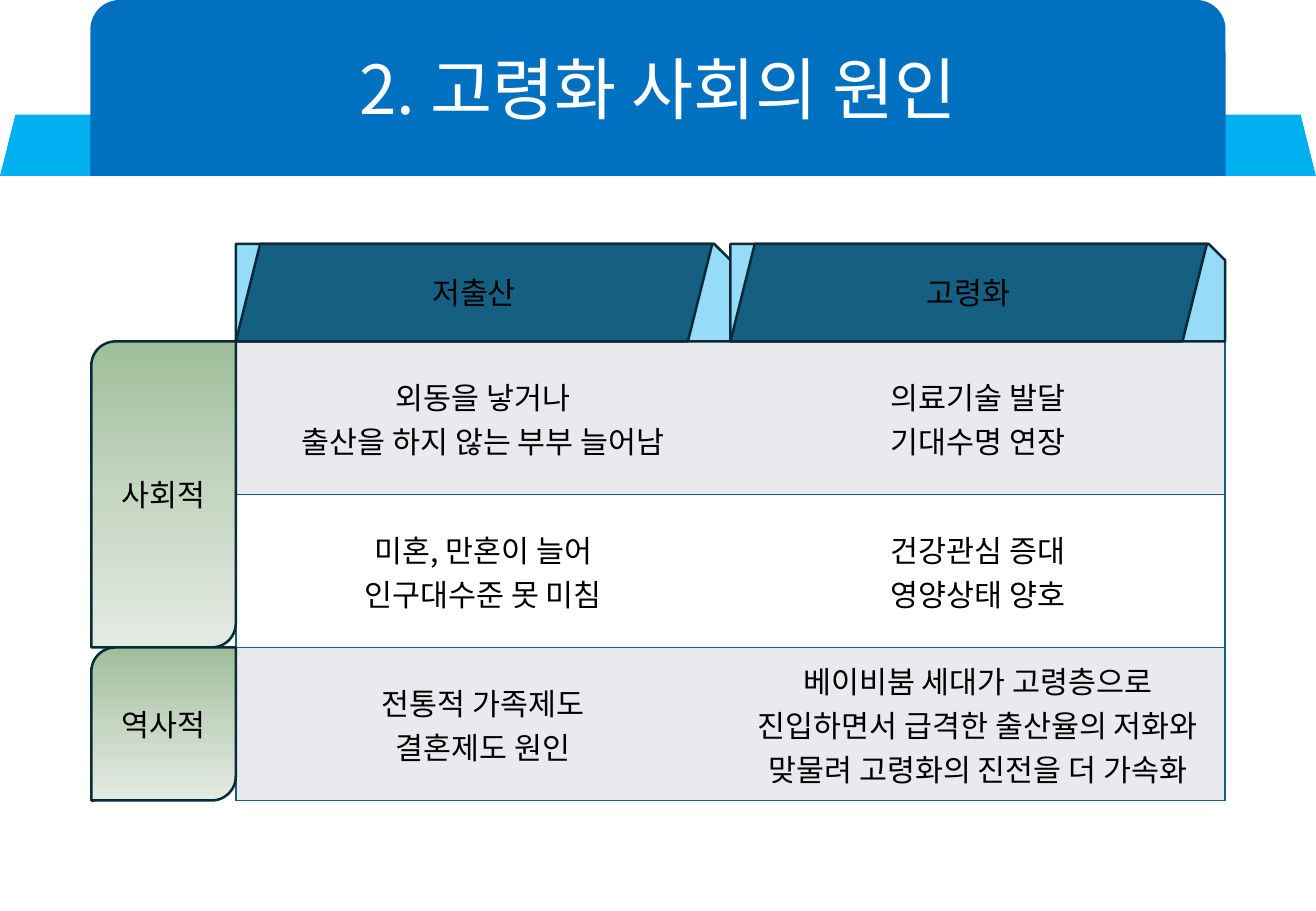
"""Build the slide on the causes of an ageing society."""
from copy import deepcopy
from dataclasses import dataclass

from pptx import Presentation
from pptx.dml.color import RGBColor
from pptx.enum import shapes, text
from pptx.oxml import ns, xmlchemy
from pptx import util as u

SHAPE = shapes.MSO_SHAPE


@dataclass(frozen=True)
class Theme:
    """Colours, font and type sizes of the slide."""
    font: str = "Noto Sans CJK KR"
    title_size: int = 40
    body_size: int = 18
    ribbon: str = "00B0F0"
    banner: str = "0070C0"
    light: str = "FFFFFF"
    dark: str = "000000"
    tab: str = "156082"
    tab_back: str = "96DCF8"
    outline: str = "092A39"
    band: str = "E8EAED"
    category: tuple = ("9FBE9A", "C5D6C2", "E3EAE2")


class SlideBuilder:
    """Draw styled elements on the current slide."""

    def __init__(self, slide, theme):
        """Keep the slide and its theme."""
        self.slide = slide
        self.theme = theme

    def add_lines(self, frame, lines, size=None, color=None, spacing=None):
        """Set centred lines, one paragraph each."""
        frame.word_wrap = True
        for index, line in enumerate(lines):
            paragraph = frame.add_paragraph() if index else frame.paragraphs[0]
            paragraph.alignment = text.PP_ALIGN.CENTER
            paragraph.line_spacing = spacing
            run = paragraph.add_run()
            run.text = line
            run.font.size = u.Pt(size or self.theme.body_size)
            run.font.color.rgb = RGBColor.from_string(color or self.theme.dark)
            run.font.name = self.theme.font
            east_asian = xmlchemy.OxmlElement("a:ea")
            east_asian.set("typeface", self.theme.font)
            run.font._element.append(east_asian)

    def shape(self, preset, box, fill, outlined=True):
        """Add a preset shape with a plain or gradient fill."""
        shape = self.slide.shapes.add_shape(preset, *map(u.Cm, box))
        shape.shadow.inherit = False
        shape.text_frame.vertical_anchor = text.MSO_ANCHOR.MIDDLE
        if isinstance(fill, tuple):
            self.shade(shape, fill)
        else:
            shape.fill.solid()
            shape.fill.fore_color.rgb = RGBColor.from_string(fill)
        if outlined:
            shape.line.color.rgb = RGBColor.from_string(self.theme.outline)
            shape.line.width = u.Pt(1.5)
        else:
            shape.line.fill.background()
        return shape

    def shade(self, shape, colors):
        """Fill a shape from top to bottom with three even stops."""
        shape.fill.gradient()
        shape.fill.gradient_angle = 270
        stops = shape._element.spPr.find(".//" + ns.qn("a:gsLst"))
        stops.insert(1, deepcopy(stops[0]))
        for index, (stop, color) in enumerate(zip(shape.fill.gradient_stops, colors)):
            stop.position = index / 2
            stop.color.rgb = RGBColor.from_string(color)

    def banner(self, title, ribbon_box, banner_box):
        """Add the title banner in front of its ribbon."""
        theme = self.theme
        self.shape(SHAPE.TRAPEZOID, ribbon_box, theme.ribbon, False)
        front = self.shape(SHAPE.ROUND_2_SAME_RECTANGLE, banner_box, theme.banner, False)
        self.add_lines(front.text_frame, [title], theme.title_size, theme.light, 0.9)

    def header(self, label, left, top, width, height):
        """Add a folded column header."""
        self.shape(SHAPE.SNIP_1_RECTANGLE, (left, top, width, height), self.theme.tab_back)
        front = self.shape(SHAPE.PARALLELOGRAM, (left, top, width - 0.38, height), self.theme.tab)
        self.add_lines(front.text_frame, [label])

    def category(self, label, box):
        """Add a row category with two rounded corners."""
        block = self.shape(SHAPE.ROUND_2_DIAG_RECTANGLE, box, self.theme.category)
        self.add_lines(block.text_frame, [label])

    def border(self, cell, sides):
        """Rule the given sides of a cell and clear the others."""
        properties = cell._tc.get_or_add_tcPr()
        for index, side in enumerate("LRTB"):
            line = xmlchemy.OxmlElement(f"a:ln{side}")
            if side in sides:
                line.set("w", str(u.Pt(1)))
                fill = xmlchemy.OxmlElement("a:solidFill")
                color = xmlchemy.OxmlElement("a:srgbClr")
                color.set("val", self.theme.tab)
                fill.append(color)
            else:
                fill = xmlchemy.OxmlElement("a:noFill")
            line.append(fill)
            properties.insert(index, line)

    def table(self, rows, left, top, column_width, row_height):
        """Add the banded table of causes."""
        columns = len(rows[0])
        size = (column_width * columns, row_height * len(rows))
        frame = self.slide.shapes.add_table(
            len(rows), columns, *map(u.Cm, (left, top, *size)))
        table = frame.table
        table.first_row = table.horz_banding = False
        for row, causes in enumerate(rows):
            for column, lines in enumerate(causes):
                cell = table.cell(row, column)
                cell.vertical_anchor = text.MSO_ANCHOR.MIDDLE
                cell.fill.solid()
                fill = self.theme.light if row % 2 else self.theme.band
                cell.fill.fore_color.rgb = RGBColor.from_string(fill)
                self.border(cell, "TB" + ("R" if column else "L"))
                self.add_lines(cell.text_frame, lines)


CAUSES = [
    [["외동을 낳거나", "출산을 하지 않는 부부 늘어남"],
     ["의료기술 발달", "기대수명 연장"]],
    [["미혼, 만혼이 늘어", "인구대수준 못 미침"],
     ["건강관심 증대", "영양상태 양호"]],
    [["전통적 가족제도", "결혼제도 원인"],
     ["베이비붐 세대가 고령층으로 진입하면서 급격한 출산율의 저화와",
      "맞물려 고령화의 진전을 더 가속화"]],
]


def main():
    """Lay out the slide and save it."""
    deck = Presentation()
    deck.slide_width, deck.slide_height = u.Cm(27.51), u.Cm(19.05)
    builder = SlideBuilder(deck.slides.add_slide(deck.slide_layouts[6]), Theme())
    builder.banner("2. 고령화 사회의 원인", (0, 2.4, 27.51, 1.28), (1.89, 0, 23.73, 3.68))

    left, top, column_width, row_height = 4.93, 7.14, 10.34, 3.2
    header_height, category_width = 2.04, 3.02
    builder.table(CAUSES, left, top, column_width, row_height)
    for column, label in enumerate(["저출산", "고령화"]):
        builder.header(label, left + column * column_width, top - header_height,
                       column_width, header_height)
    category_top = top
    for label, span in [("사회적", 2), ("역사적", 1)]:
        height = span * row_height
        builder.category(label, (left - category_width, category_top, category_width, height))
        category_top += height
    deck.save("out.pptx")


if __name__ == "__main__":
    main()
